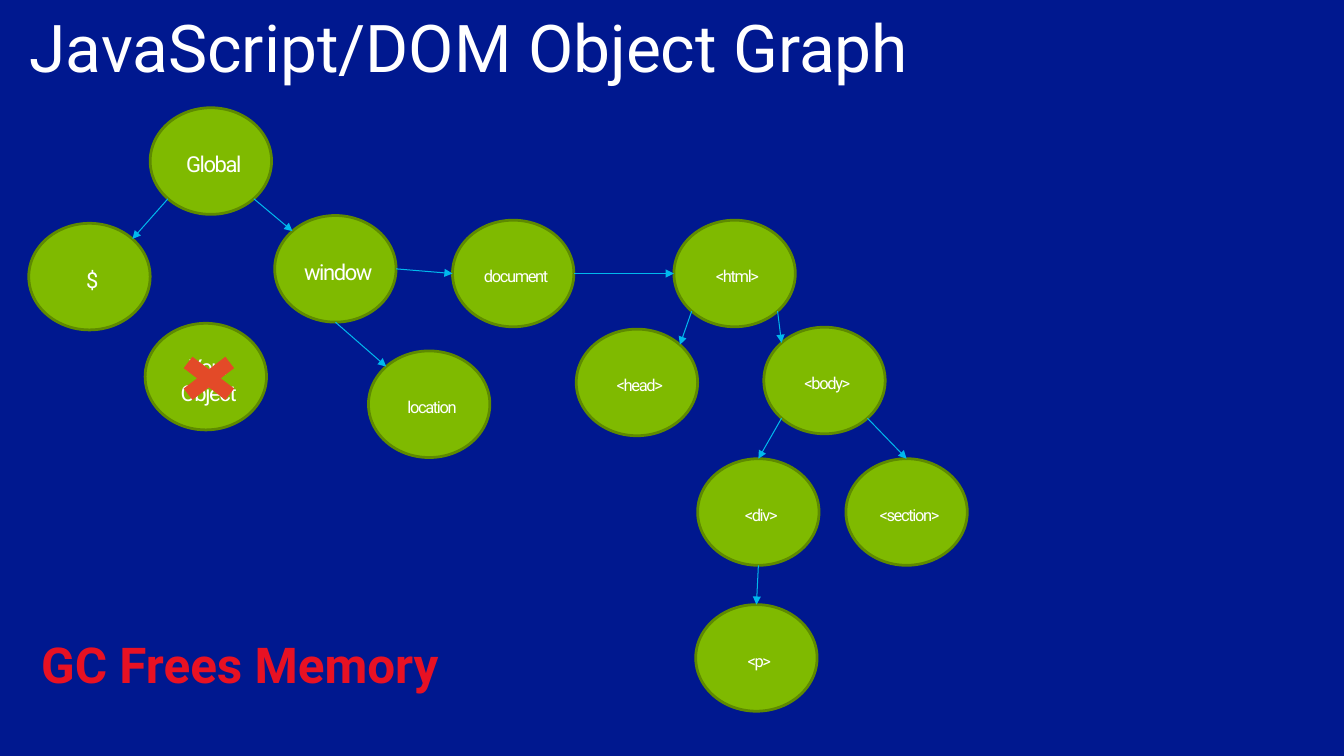
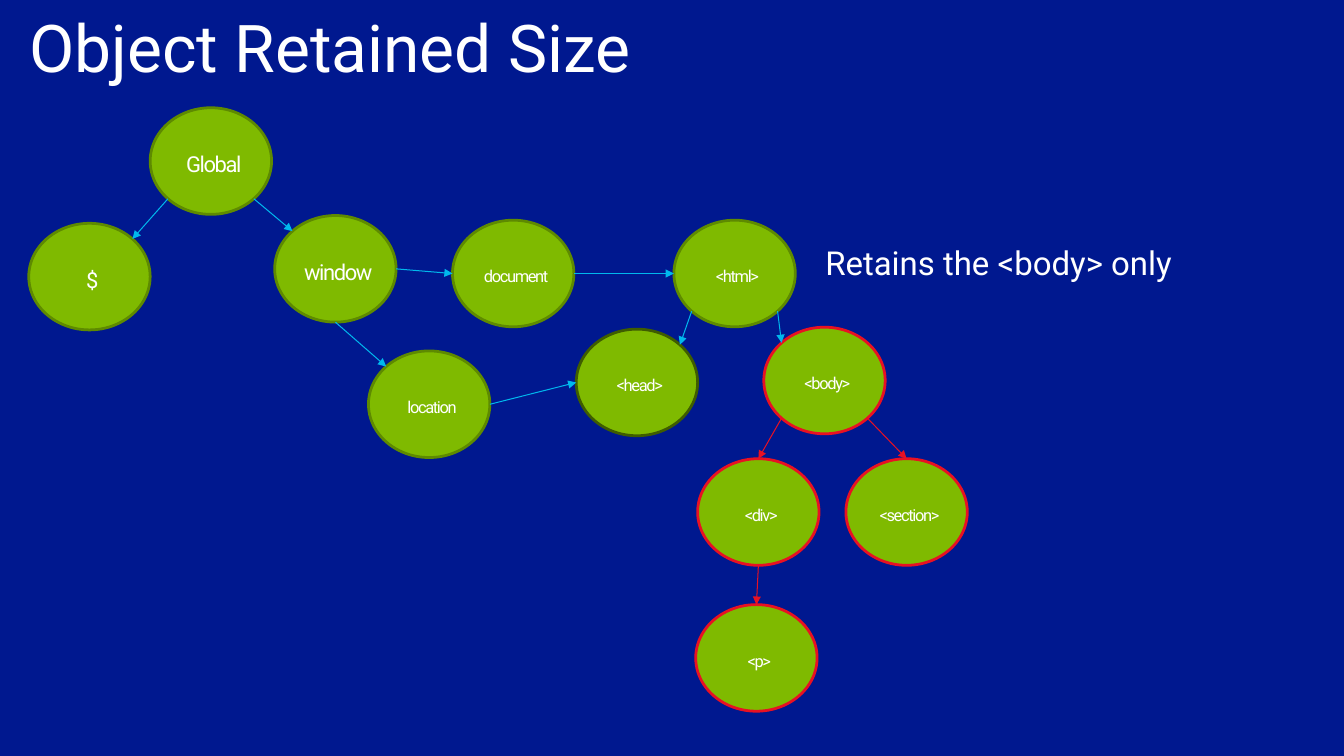
from math import cos, pi, sin

from lxml import etree
from pptx import Presentation
from pptx import util as u
from pptx.dml.color import RGBColor
from pptx.enum import shapes, text
from pptx.oxml.ns import qn

COLORS = {
    "back": "00188F", "white": "FFFFFF", "node": "7FBA00", "edge": "5E8A00",
    "dark": "3F5D00", "link": "00B8ED", "red": "E81123", "cross": "E34A28",
}
FONT = "Roboto"
WIDE, HIGH = 3.12, 2.74  # size of every node, cm

# Ellipse sites run anticlockwise from the top
TOP, TL, LEFT, BL, BOTTOM, BR, RIGHT, TR = range(8)

# Node offsets inside the graph box (cm) and text size (pt)
NODES = {
    "window": (6.32, 2.77, 16),
    "Global": (3.12, 0, 16),
    "document": (10.89, 2.89, 12),
    "<html>": (16.58, 2.89, 12),
    "<head>": (14.07, 5.69, 12),
    "<body>": (18.89, 5.64, 12),
    "$": (0, 2.97, 16),
    "<div>": (17.19, 9.02, 12),
    "<section>": (21, 9.02, 12),
    "location": (8.73, 6.25, 12),
    "<p>": (17.14, 12.77, 12),
}
LINKS = [
    ("Global", BR, "window", TL),
    ("Global", BL, "$", TR),
    ("window", RIGHT, "document", LEFT),
    ("window", BOTTOM, "location", TL),
    ("document", RIGHT, "<html>", LEFT),
    ("<html>", BL, "<head>", TR),
    ("<html>", BR, "<body>", TL),
    ("<body>", BL, "<div>", TOP),
    ("<body>", BR, "<section>", TOP),
    ("<div>", BOTTOM, "<p>", TOP),
]


def rgb(name):
    return RGBColor.from_string(COLORS[name])


def style(frame, words, size, color="white", bold=False):
    frame.text = words
    run = frame.paragraphs[0].runs[0]
    run.font.name, run.font.size = FONT, u.Pt(size)
    run.font.bold, run.font.color.rgb = bold, rgb(color)
    return run


def inset(frame, left, top, right, bottom):
    frame.margin_left, frame.margin_top = u.Cm(left), u.Cm(top)
    frame.margin_right, frame.margin_bottom = u.Cm(right), u.Cm(bottom)


def page(deck, title):
    """Blank slide with the shared background and title."""
    slide = deck.slides.add_slide(deck.slide_layouts[6])
    fill = slide.background.fill
    fill.solid()
    fill.fore_color.rgb = rgb("back")
    box = slide.shapes.add_textbox(u.Cm(0.76), u.Cm(0.18), u.Cm(33.02), u.Cm(2.54))
    frame = box.text_frame
    frame.word_wrap = True
    inset(frame, 0, 0, 0, 0)
    style(frame, title, 48)
    return slide


def note(slide, words, x, y, w, h, size, color="white", bold=False):
    """One-line remark that fits its text."""
    box = slide.shapes.add_textbox(u.Cm(x), u.Cm(y), u.Cm(w), u.Cm(h))
    frame = box.text_frame
    frame.word_wrap = False
    frame.auto_size = text.MSO_AUTO_SIZE.SHAPE_TO_FIT_TEXT
    style(frame, words, size, color, bold)


def solid(slide, kind, x, y, w, h, color):
    shape = slide.shapes.add_shape(kind, u.Cm(x), u.Cm(y), u.Cm(w), u.Cm(h))
    shape.shadow.inherit = False
    shape.fill.solid()
    shape.fill.fore_color.rgb = rgb(color)
    return shape


def node(slide, words, x, y, size, edge="edge"):
    shape = solid(slide, shapes.MSO_SHAPE.OVAL, x, y, WIDE, HIGH, "node")
    shape.line.color.rgb, shape.line.width = rgb(edge), u.Pt(2)
    frame = shape.text_frame
    frame.word_wrap = True
    frame.vertical_anchor = text.MSO_ANCHOR.MIDDLE
    inset(frame, 0.25, 0.25, 0.1, 0.1)
    run = style(frame, words, size)
    frame.paragraphs[0].alignment = text.PP_ALIGN.CENTER
    run.font._element.set("spc", "-100")
    return shape


def site(shape, spot):
    """Point on the ellipse at one of its eight sites."""
    turn = spot * pi / 4
    return (u.Emu(round(shape.left + shape.width * (1 - sin(turn)) / 2)),
            u.Emu(round(shape.top + shape.height * (1 - cos(turn)) / 2)))


def link(slide, start, out, end, into, color):
    """Arrow glued to a site of each of two ellipses."""
    line = slide.shapes.add_connector(
        shapes.MSO_CONNECTOR.STRAIGHT, *site(start, out), *site(end, into))
    line.line.color.rgb, line.line.width = rgb(color), u.Pt(0.75)
    etree.SubElement(line.line._get_or_add_ln(), qn("a:tailEnd"), type="triangle")
    etree.SubElement(line._element.spPr, qn("a:effectLst"))
    glue = line._element.find(".//" + qn("p:cNvCxnSpPr"))
    for tag, shape, spot in (("a:stCxn", start, out), ("a:endCxn", end, into)):
        etree.SubElement(glue, qn(tag), id=str(shape.shape_id), idx=str(spot))


def graph(slide, x, y, edges=None, extra=()):
    """Object graph; edges maps node names to outline colours."""
    edges = edges or {}
    ovals = {name: node(slide, name, x + dx, y + dy, size, edges.get(name, "edge"))
             for name, (dx, dy, size) in NODES.items()}
    for start, out, end, into in [*LINKS, *extra]:
        color = "red" if edges.get(start) == "red" else "link"
        link(slide, ovals[start], out, ovals[end], into, color)


def freed(slide, x, y):
    """Unlinked node, crossed out."""
    node(slide, "Your Object", x, y, 16)
    cross = solid(slide, shapes.MSO_SHAPE.MATH_MULTIPLY,
                  x + 0.61, y + 0.63, 2.06, 1.57, "cross")
    cross.line.fill.background()


def main():
    deck = Presentation()
    deck.slide_width, deck.slide_height = u.Cm(34.54), u.Cm(19.43)
    x, y = 0.74, 2.77

    # Collected object
    slide = page(deck, "JavaScript/DOM Object Graph")
    graph(slide, x, y)
    freed(slide, x + 2.99, y + 5.54)
    note(slide, "GC Frees Memory", 0.81, 16.18, 11.48, 1.8, 36, "red", True)

    # Retained subtree
    slide = page(deck, "Object Retained Size")
    edges = dict.fromkeys(("<body>", "<div>", "<section>", "<p>"), "red")
    graph(slide, x, y, {**edges, "<head>": "dark"},
          [("location", RIGHT, "<head>", LEFT)])
    note(slide, "Retains the <body> only", 20.96, 6.1, 9.86, 1.27, 24)

    deck.save("out.pptx")


if __name__ == "__main__":
    main()
